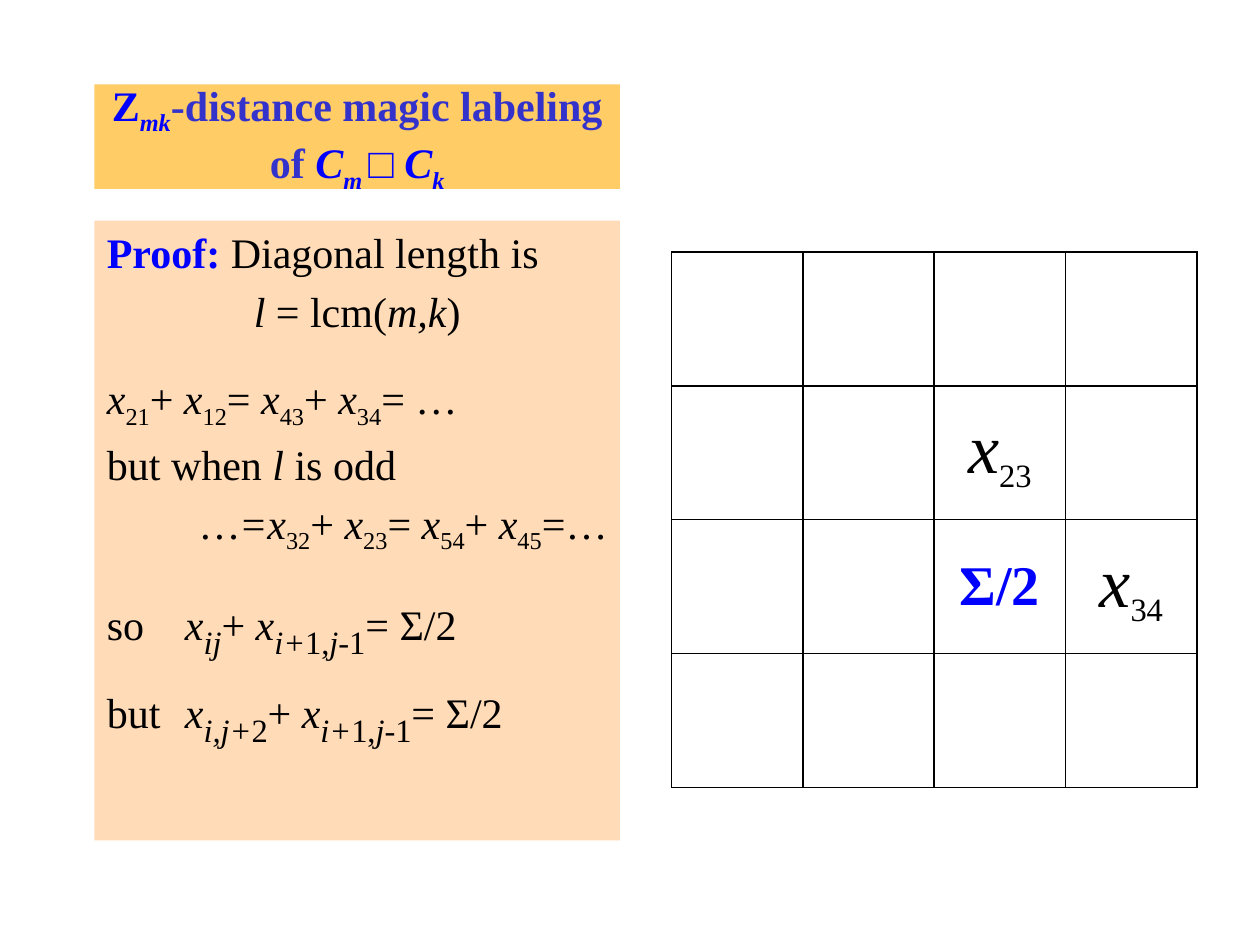
"""Build the slide on distance magic labeling of a product of cycles."""
from dataclasses import dataclass

from lxml.etree import SubElement
from pptx import Presentation
from pptx.dml.color import RGBColor
from pptx.enum.shapes import MSO_SHAPE
from pptx.enum.text import MSO_ANCHOR, PP_ALIGN
from pptx.oxml.ns import qn
from pptx.util import Inches, Pt


@dataclass(frozen=True)
class Theme:
    font: str = "Times New Roman"
    black: str = "000000"
    blue: str = "0000FF"
    indigo: str = "3333CC"
    gold: str = "FFCC66"
    peach: str = "FFDBB7"
    text: int = 24
    large: int = 32
    label: int = 40
    gap: float = 4.8
    wide_gap: float = 6.4


theme = Theme()


def add_text(paragraph, text, size=theme.text, color=theme.black, bold=False, italic=False, sub=False):
    run = paragraph.add_run()
    run.text = text
    run.font.name = theme.font
    run.font.size = Pt(size)
    run.font.color.rgb = RGBColor.from_string(color)
    run.font.bold = bold
    run.font.italic = italic
    if sub:
        run._r.get_or_add_rPr().set("baseline", "-25000")


def add_panel(top, height, color, anchor):
    panel = slide.shapes.add_shape(
        MSO_SHAPE.RECTANGLE, Inches(0.75), Inches(top), Inches(4.17), Inches(height))
    panel.shadow.inherit = False
    panel.fill.solid()
    panel.fill.fore_color.rgb = RGBColor.from_string(color)
    panel.line.fill.background()
    panel.text_frame.word_wrap = True
    panel.text_frame.vertical_anchor = anchor
    return panel.text_frame


presentation = Presentation()
presentation.slide_width = Inches(10)
presentation.slide_height = Inches(7.5)
slide = presentation.slides.add_slide(presentation.slide_layouts[6])

plain = {}
var = {"italic": True}
index = {"sub": True}
large_index = {"sub": True, "size": theme.large}
large_var = {**large_index, **var}
blue = {"color": theme.blue, "bold": True}
blue_var = {**blue, **var}

heading = add_panel(0.67, 0.83, theme.gold, MSO_ANCHOR.MIDDLE).paragraphs[0]
heading.alignment = PP_ALIGN.CENTER
for text, style in [
    ("Z", blue),
    ("mk", {**blue_var, **index}),
    ("-distance magic labeling of ", {"color": theme.indigo, "bold": True}),
    ("C", blue_var),
    ("m ", {**blue_var, **index}),
    ("□ ", {"color": theme.blue}),
    ("C", blue_var),
    ("k", {**blue_var, **index}),
]:
    add_text(heading, text, **style)

shifted_sum = [("+", plain), (" x", var), ("i+", large_var), ("1,", large_index),
               ("j-", large_var), ("1", large_index), ("= Σ/2", plain)]
proof_lines = [
    (PP_ALIGN.LEFT, theme.gap, [("Proof: ", blue), ("Diagonal length is", plain)]),
    (PP_ALIGN.CENTER, theme.gap,
     [("l", var), (" = lcm(", plain), ("m,k", var), (")", plain)]),
    (PP_ALIGN.LEFT, theme.gap + 16.2,
     [("x", var), ("21", index), ("+", plain), (" x", var), ("12", index), ("=", plain),
      (" x", var), ("43", index), ("+", plain), (" x", var), ("34", index), ("= …", plain)]),
    (PP_ALIGN.LEFT, theme.gap, [("but when ", plain), ("l", var), (" is odd", plain)]),
    (PP_ALIGN.RIGHT, theme.gap,
     [("…=x", var), ("32", index), ("+", plain), (" x", var), ("23", index), ("=", plain),
      (" x", var), ("54", index), ("+", plain), (" x", var), ("45", index), ("=…", plain)]),
    (PP_ALIGN.LEFT, theme.wide_gap + 10.8,
     [("so\t", plain), ("x", var), ("ij", large_var)] + shifted_sum),
    (PP_ALIGN.LEFT, theme.wide_gap,
     [("but\t", plain), ("x", var), ("i,j+", large_var), ("2", large_index)] + shifted_sum),
]
proof = add_panel(1.75, 4.92, theme.peach, MSO_ANCHOR.TOP)
for number, (alignment, gap, pieces) in enumerate(proof_lines):
    line = proof.add_paragraph() if number else proof.paragraphs[0]
    line.alignment = alignment
    line.space_before = Pt(gap)
    if "\t" in pieces[0][0]:
        stops = SubElement(line._p.get_or_add_pPr(), qn("a:tabLst"))
        SubElement(stops, qn("a:tab"), pos=str(Inches(0.62)), algn="l")
    for text, style in pieces:
        add_text(line, text, **style)

grid = slide.shapes.add_table(
    4, 4, Inches(5.33), Inches(2), Inches(4.17), Inches(4.25)).table
grid.first_row = False
grid.horz_banding = False
label_var = {"size": theme.label, "italic": True}
labels = {
    (1, 2): [("x", label_var), ("23", large_index)],
    (2, 2): [("Σ/2", {**blue, "size": theme.large})],
    (2, 3): [("x", label_var), ("34", large_index)],
}
for row in range(4):
    for column in range(4):
        cell = grid.cell(row, column)
        cell.vertical_anchor = MSO_ANCHOR.MIDDLE
        cell.margin_left = cell.margin_right = Inches(0.05)
        cell.margin_top = cell.margin_bottom = Inches(0.05)
        for side in ("lnL", "lnR", "lnT", "lnB"):
            border = SubElement(cell._tc.get_or_add_tcPr(), qn(f"a:{side}"), w=str(Pt(1)))
            SubElement(SubElement(border, qn("a:solidFill")), qn("a:srgbClr"), val=theme.black)
        cell.fill.background()
        label = cell.text_frame.paragraphs[0]
        label.alignment = PP_ALIGN.CENTER
        for text, style in labels.get((row, column), []):
            add_text(label, text, **style)

presentation.save("out.pptx")
